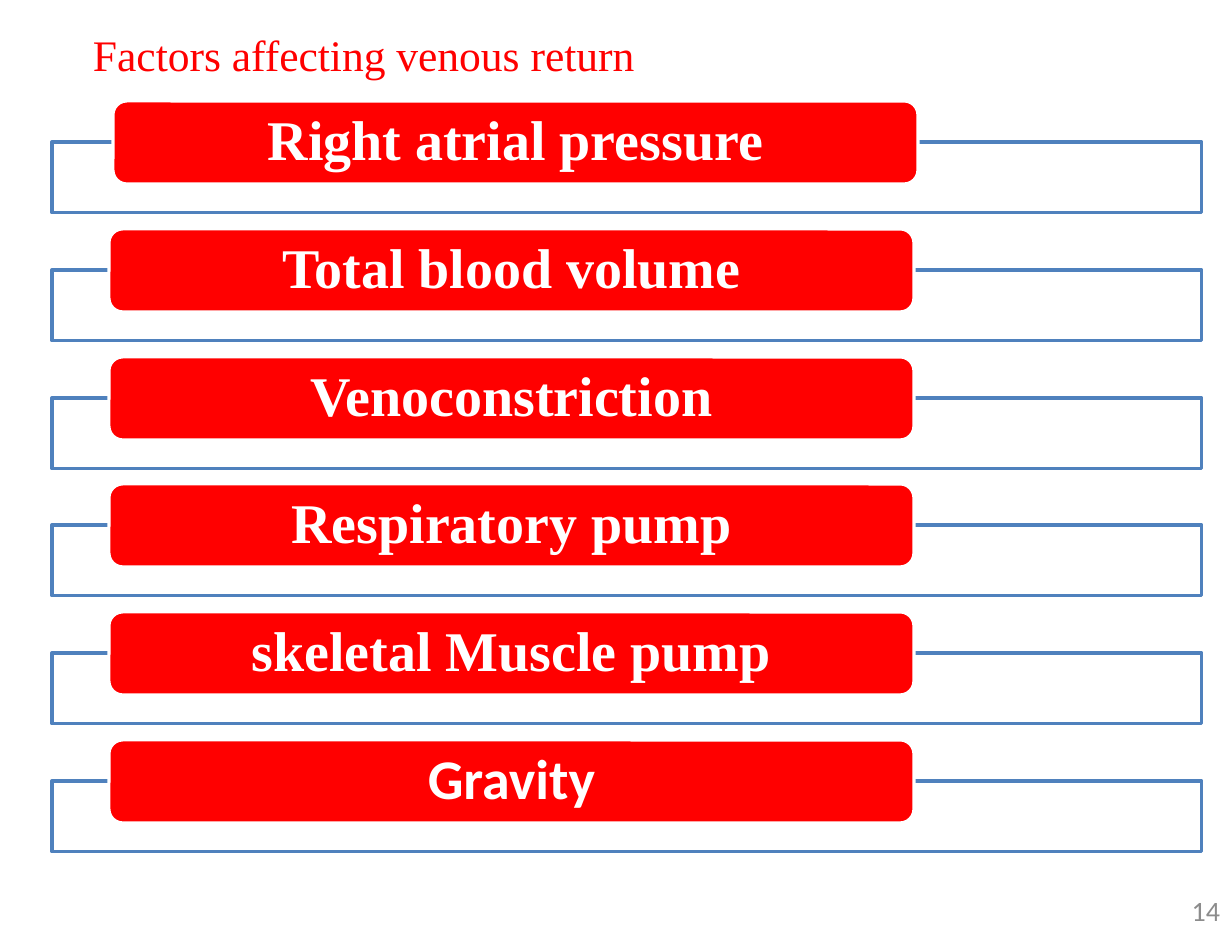
import pptx
import pptx.dml.color
import pptx.enum.shapes
import pptx.enum.text
import pptx.oxml.ns
import pptx.util
from lxml import etree

EMU_PER_PX = 914400 / 112
SHAPES = pptx.enum.shapes.MSO_SHAPE
ALIGN = pptx.enum.text.PP_ALIGN
ANCHOR = pptx.enum.text.MSO_ANCHOR
FIT = pptx.enum.text.MSO_AUTO_SIZE

SERIF = "Times New Roman"
SANS = "Calibri"
RED = "FF0000"
WHITE = "FFFFFF"
BLUE = "4F81BD"
GREY = "8C8C8C"

FACTORS = [
    ("Right atrial pressure", SERIF),
    ("Total blood volume", SERIF),
    ("Venoconstriction", SERIF),
    ("Respiratory pump", SERIF),
    ("skeletal Muscle pump", SERIF),
    ("Gravity", SANS),
]
FIRST_TOP, LAST_TOP = 142, 781
LABEL_RISE = 41


def px(length):
    return pptx.util.Emu(round(length * EMU_PER_PX))


def color(hex_string):
    return pptx.dml.color.RGBColor.from_string(hex_string)


def set_all(target, values):
    for name, value in values.items():
        setattr(target, name, value)


def write(box, text, frame_format, para_format, font_format, ink):
    frame = box.text_frame
    set_all(frame, frame_format)
    para = frame.paragraphs[0]
    set_all(para, para_format)
    span = para.add_run()
    span.text = text
    set_all(span.font, font_format)
    span.font.color.rgb = color(ink)


def insets(side, end):
    return {"margin_left": px(side), "margin_right": px(side),
            "margin_top": px(end), "margin_bottom": px(end)}


def add_block(page, kind, bounds, fill, line):
    block = page.shapes.add_shape(kind, *map(px, bounds))
    block.shadow.inherit = False
    block.fill.solid()
    block.fill.fore_color.rgb = color(fill)
    block.line.color.rgb = color(line)
    block.line.width = pptx.util.Pt(2)
    return block


def set_opacity(block, percent):
    qn = pptx.oxml.ns.qn
    tint = block.element.spPr.find(qn("a:solidFill")).find(qn("a:srgbClr"))
    etree.SubElement(tint, qn("a:alpha"), val=str(percent * 1000))


def add_title(page, text):
    title = page.shapes.title
    set_all(title, {"left": px(93), "top": px(28),
                    "width": px(859), "height": px(53)})
    write(title, text,
          {**insets(0, 0), "vertical_anchor": ANCHOR.TOP,
           "word_wrap": True, "auto_size": FIT.SHAPE_TO_FIT_TEXT},
          {"alignment": ALIGN.LEFT},
          {"name": SERIF, "size": pptx.util.Pt(28)}, RED)


def add_factor(page, text, font_name, left, top):
    frame = add_block(page, SHAPES.RECTANGLE, (52, top, 1150, 71), WHITE, BLUE)
    set_opacity(frame, 90)
    label = add_block(page, SHAPES.ROUNDED_RECTANGLE,
                      (left, top - LABEL_RISE, 805, 83), RED, WHITE)
    write(label, text,
          {**insets(34, 4), "vertical_anchor": ANCHOR.MIDDLE, "word_wrap": True},
          {"alignment": ALIGN.CENTER, "line_spacing": 0.9},
          {"name": font_name, "size": pptx.util.Pt(36), "bold": True}, WHITE)


def add_page_number(page, text):
    box = page.shapes.add_textbox(px(944), px(886), px(288), px(66))
    write(box, text, {**insets(12, 7), "word_wrap": True},
          {"alignment": ALIGN.RIGHT},
          {"name": SANS, "size": pptx.util.Pt(18)}, GREY)


def main():
    deck = pptx.Presentation()
    set_all(deck, {"slide_width": px(1232), "slide_height": px(952)})
    page = deck.slides.add_slide(deck.slide_layouts.get_by_name("Title Only"))
    add_title(page, "Factors affecting venous return")
    pitch = (LAST_TOP - FIRST_TOP) / (len(FACTORS) - 1)
    for row, (text, font_name) in enumerate(FACTORS):
        left = 113 if row == 0 else 109
        add_factor(page, text, font_name, left, round(FIRST_TOP + row * pitch))
    add_page_number(page, "14")
    deck.save("out.pptx")


if __name__ == "__main__":
    main()
